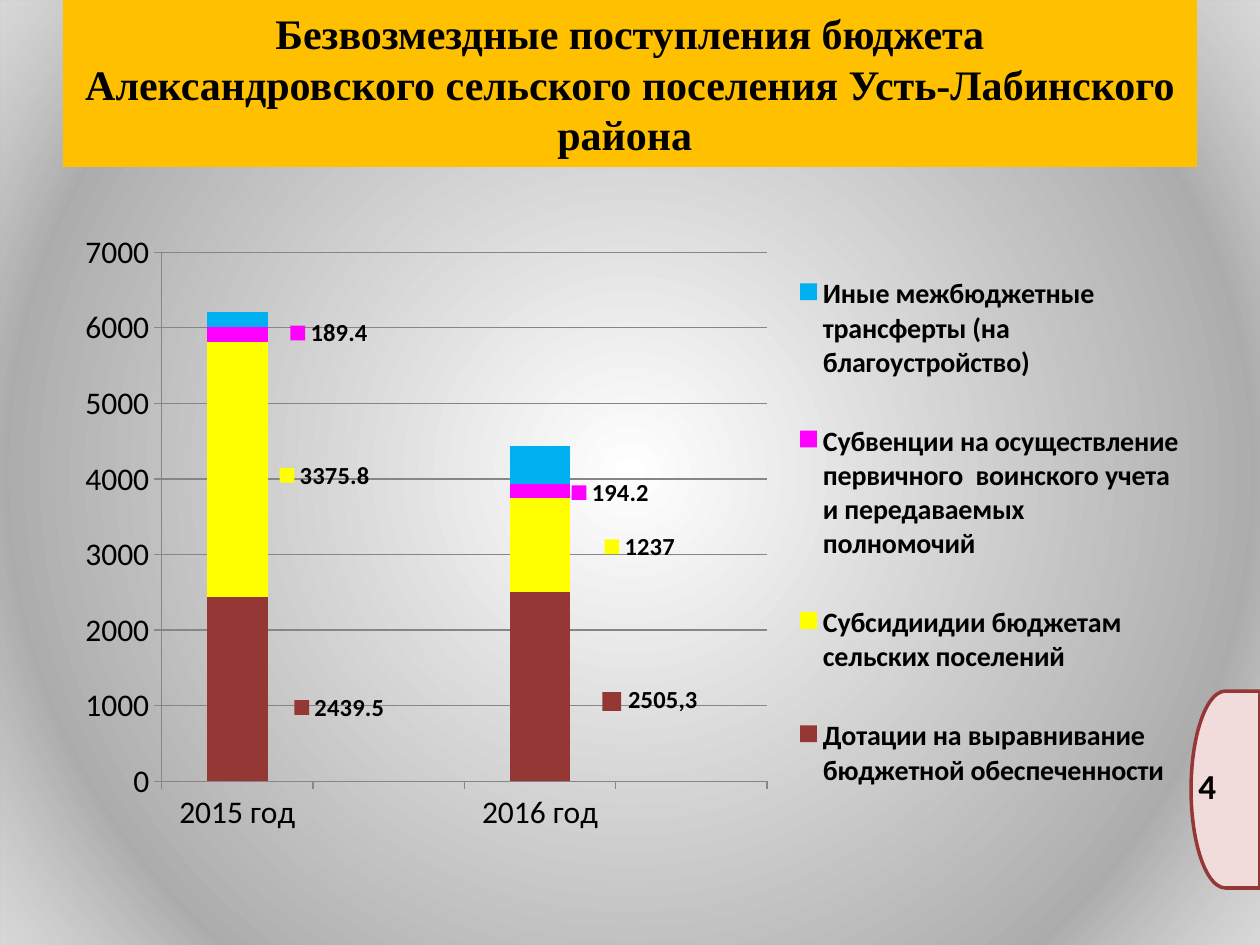
from dataclasses import dataclass

from lxml import etree
from pptx import Presentation
from pptx.chart.data import CategoryChartData
from pptx.dml.color import RGBColor
from pptx.enum.chart import XL_CHART_TYPE, XL_LEGEND_POSITION, XL_TICK_MARK
from pptx.enum.shapes import MSO_SHAPE
from pptx.enum.text import MSO_ANCHOR, PP_ALIGN
from pptx.oxml.ns import nsdecls, qn
from pptx.util import Emu, Pt

STACKED = XL_CHART_TYPE.COLUMN_STACKED
RIGHT = XL_LEGEND_POSITION.RIGHT
OUTSIDE = XL_TICK_MARK.OUTSIDE
RECT = MSO_SHAPE.RECTANGLE
DELAY = MSO_SHAPE.FLOWCHART_DELAY
MIDDLE = MSO_ANCHOR.MIDDLE
CENTER = PP_ALIGN.CENTER
PX = 914400 / 126


@dataclass(frozen=True)
class Theme:
    black: str = "000000"
    banner: str = "FFC000"
    maroon: str = "953735"
    yellow: str = "FFFF00"
    magenta: str = "FF00FF"
    blue: str = "00B0F0"
    tab: str = "F2DCDB"
    grid: str = "868686"
    title_font: str = "Times New Roman"
    body_font: str = "Calibri"
    title: int = 24
    number: int = 20
    axis: int = 18
    legend: int = 16
    label: int = 14


@dataclass(frozen=True)
class Box:
    x: int
    y: int
    w: int
    h: int

    def emu(self) -> list[Emu]:
        return [Emu(round(v * PX)) for v in (self.x, self.y, self.w, self.h)]


@dataclass(frozen=True)
class Label:
    point: int
    dx: int
    dy: int
    text: str = ""


@dataclass(frozen=True)
class Income:
    name: str
    color: str
    values: tuple
    labels: tuple = ()


T = Theme()
SLIDE = Box(0, 0, 1260, 945)
TITLE = Box(63, 0, 1134, 167)
CHART = Box(63, 221, 1134, 624)
PLOT = Box(99, 31, 605, 529)
LEGEND = Box(740, 12, 382, 600)
TAB = Box(1191, 691, 69, 197)
NUMBER = Box(1186, 758, 73, 55)

TITLE_LINES = (
    "Безвозмездные поступления бюджета",
    "Александровского сельского поселения Усть-Лабинского района ",
)
YEARS = ("2015 год", "", "2016 год", "")
INCOMES = (
    Income("Дотации на выравнивание бюджетной обеспеченности", T.maroon,
           (2439.5, None, 2505.3, None),
           (Label(0, 102, 19), Label(2, 110, 13, "2505,3"))),
    Income("Субсидиидии бюджетам сельских поселений ", T.yellow,
           (3375.8, None, 1237, None),
           (Label(0, 87, 6), Label(2, 100, 2))),
    Income("Субвенции на осуществление первичного  воинского учета "
           "и передаваемых полномочий", T.magenta,
           (189.4, None, 194.2, None),
           (Label(0, 92, -1), Label(2, 70, 2))),
    Income("Иные межбюджетные трансферты (на благоустройство)", T.blue,
           (200, None, 500, None)),
)


def rgb(color: str) -> RGBColor:
    return RGBColor.from_string(color)


def style(font, size: int, bold: bool = False, name: str = T.body_font) -> None:
    font.size, font.bold, font.name = Pt(size), bold, name
    font.color.rgb = rgb(T.black)


def add_shape(shapes, kind, box: Box, fill: str):
    sp = shapes.add_shape(kind, *box.emu())
    sp.shadow.inherit = False
    sp.fill.solid()
    sp.fill.fore_color.rgb = rgb(fill)
    sp.line.fill.background()
    return sp


def set_radial(props, stops: tuple) -> None:
    gs = "".join(
        f'<a:gs pos="{pos * 1000}"><a:srgbClr val="{color}">'
        f'<a:alpha val="{alpha * 1000}"/></a:srgbClr></a:gs>'
        for pos, color, alpha in stops)
    grad = etree.fromstring(
        f'<a:gradFill {nsdecls("a")} rotWithShape="1"><a:gsLst>{gs}</a:gsLst>'
        '<a:path path="circle"><a:fillToRect l="50000" t="50000" r="50000" '
        'b="50000"/></a:path></a:gradFill>')
    props.replace(props.find(qn("a:solidFill")), grad)


def set_layout(parent, index: int, values: dict) -> None:
    old = parent.find(qn("c:layout"))
    if old is not None:
        parent.remove(old)
    items = "".join(f'<c:{k} val="{v}"/>' for k, v in values.items())
    parent.insert(index, etree.fromstring(
        f'<c:layout {nsdecls("c")}><c:manualLayout>{items}'
        '</c:manualLayout></c:layout>'))


def edges(box: Box) -> dict:
    return {"xMode": "edge", "yMode": "edge",
            "x": round(box.x / CHART.w, 3), "y": round(box.y / CHART.h, 3),
            "w": round(box.w / CHART.w, 3), "h": round(box.h / CHART.h, 3)}


def add_labels(series, labels: tuple) -> None:
    for label in labels:
        data_label = series.points[label.point].data_label
        if label.text:
            r = data_label.text_frame.paragraphs[0].add_run()
            r.text = label.text
            style(r.font, T.label, True)
        else:
            style(data_label.font, T.label, True)
    for label, node in zip(labels, series._element.iter(qn("c:dLbl"))):
        set_layout(node, 1, {"x": round(label.dx / CHART.w, 3),
                             "y": round(label.dy / CHART.h, 3)})
        node.find(qn("c:showLegendKey")).set("val", "1")
    for leader in series._element.iter(qn("c:showLeaderLines")):
        leader.set("val", "0")


def add_income_chart(shapes) -> None:
    data = CategoryChartData()
    data.categories = YEARS
    for income in INCOMES:
        data.add_series(income.name, income.values)
    chart = shapes.add_chart(STACKED, *CHART.emu(), data).chart
    style(chart.font, T.axis)
    chart.has_title = False
    plot = chart.plots[0]
    plot.gap_width, plot.overlap, plot.vary_by_categories = 150, 100, False
    for axis in (chart.category_axis, chart.value_axis):
        axis.major_tick_mark = OUTSIDE
        axis.format.line.color.rgb = rgb(T.grid)
    value = chart.value_axis
    value.minimum_scale, value.maximum_scale, value.major_unit = 0, 7000, 1000
    value.major_gridlines.format.line.color.rgb = rgb(T.grid)
    for series, income in zip(plot.series, INCOMES):
        series.format.fill.solid()
        series.format.fill.fore_color.rgb = rgb(income.color)
        add_labels(series, income.labels)
    chart.has_legend = True
    legend = chart.legend
    legend.position, legend.include_in_layout = RIGHT, False
    style(legend.font, T.legend, True)
    set_layout(legend._element, 1, edges(LEGEND))
    area = chart._chartSpace.find(".//" + qn("c:plotArea"))
    set_layout(area, 0, {"layoutTarget": "inner", **edges(PLOT)})


def add_title(shapes) -> None:
    tf = add_shape(shapes, RECT, TITLE, T.banner).text_frame
    tf.word_wrap, tf.vertical_anchor = True, MIDDLE
    p = tf.paragraphs[0]
    p.alignment = CENTER
    for i, line in enumerate(TITLE_LINES):
        if i:
            p.add_line_break()
        r = p.add_run()
        r.text = line
        style(r.font, T.title, True, T.title_font)


def add_page_tab(shapes) -> None:
    group = shapes.add_group_shape().shapes
    sp = add_shape(group, DELAY, TAB, T.tab)
    sp.rotation = 180
    sp.line.color.rgb = rgb(T.maroon)
    sp.line.width = Pt(2)
    tf = group.add_textbox(*NUMBER.emu()).text_frame
    tf.word_wrap = True
    r = tf.paragraphs[0].add_run()
    r.text = "4"
    style(r.font, T.number, True)


def main() -> None:
    prs = Presentation()
    prs.slide_width, prs.slide_height = SLIDE.emu()[2:]
    s = prs.slides.add_slide(prs.slide_layouts[6])
    s.background.fill.solid()
    s.background.fill.fore_color.rgb = rgb(T.black)
    set_radial(s._element.find(".//" + qn("p:bgPr")),
               ((0, "FFFFFF", 100), (100, "979797", 100)))
    glow = add_shape(s.shapes, RECT, SLIDE, T.black)
    set_radial(glow._element.spPr, ((79, "FFFFFF", 0), (100, "D9D9D9", 100)))
    add_title(s.shapes)
    add_income_chart(s.shapes)
    add_page_tab(s.shapes)
    prs.save("out.pptx")


if __name__ == "__main__":
    main()
